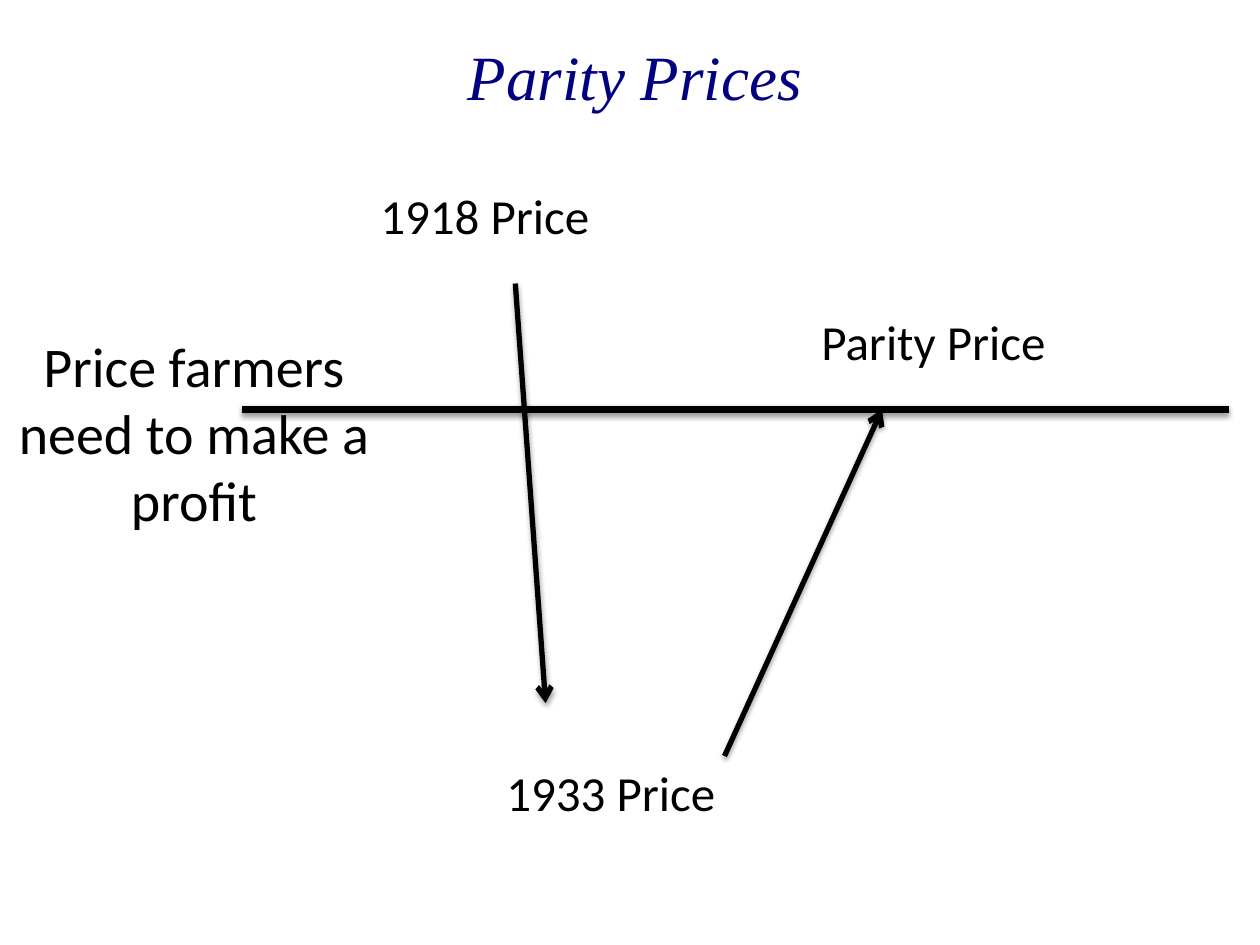
from dataclasses import dataclass

from lxml.etree import SubElement
from pptx import Presentation
from pptx.dml.color import RGBColor as RGB
from pptx.enum.shapes import MSO_CONNECTOR as Conn
from pptx.enum.text import MSO_ANCHOR as Anchor, MSO_AUTO_SIZE as Fit, PP_ALIGN as Align
from pptx.oxml.ns import qn
from pptx.shapes.connector import Connector
from pptx.slide import Slide
from pptx.util import Inches, Pt


@dataclass(frozen=True)
class Theme:
    ink: RGB = RGB(0, 0, 0)
    navy: RGB = RGB(0, 0, 0x80)
    serif: str = "Times New Roman"
    sans: str = "Calibri"
    title: int = 36
    note: int = 32
    label: int = 28
    level: float = 4.5
    arrow: float = 3


THEME = Theme()


@dataclass(frozen=True)
class Label:
    text: str
    box: tuple[float, float, float, float]
    size: int = THEME.label
    font: str = THEME.sans
    color: RGB = THEME.ink
    align: Align = Align.LEFT
    italic: bool = False
    wrap: bool = True


@dataclass(frozen=True)
class Line:
    start: tuple[float, float]
    end: tuple[float, float]
    width: float = THEME.arrow
    arrow: bool = True


LEVEL = 3.25  # height of the parity line

ITEMS = (
    Label("Parity Prices", (0.5, 0.25, 9.08, 1), THEME.title, THEME.serif,
          THEME.navy, Align.CENTER, italic=True, wrap=False),
    Line((1.92, LEVEL), (9.75, LEVEL), THEME.level, arrow=False),
    Label("Price farmers need to make a profit", (0, 2.58, 3.08, 1.72),
          THEME.note, align=Align.CENTER),
    Label("1918 Price", (2.92, 1.42, 2.17, 0.57)),
    Line((4.09, 2.25), (4.33, 5.58)),
    Label("1933 Price", (3.92, 6, 2.17, 0.57)),
    Line((5.75, 6), (7, LEVEL)),
    Label("Parity Price", (6.42, 2.42, 2.42, 0.57)),
)


def add_label(slide: Slide, label: Label) -> None:
    box = slide.shapes.add_textbox(*map(Inches, label.box))
    frame = box.text_frame
    frame.word_wrap = label.wrap
    frame.auto_size = Fit.SHAPE_TO_FIT_TEXT if label.wrap else Fit.NONE
    frame.vertical_anchor = Anchor.TOP
    para = frame.paragraphs[0]
    para.alignment = label.align
    run = para.add_run()
    run.text = label.text
    font = run.font
    font.name, font.size, font.italic = label.font, Pt(label.size), label.italic
    font.color.rgb = label.color


def add_shade(line: Connector) -> None:
    """Put a soft shadow straight below the line."""
    effects = SubElement(line._element.spPr, qn("a:effectLst"))
    shade = SubElement(effects, qn("a:outerShdw"), blurRad=str(Pt(3.1)),
                       dist=str(Pt(1.6)), dir="5400000", rotWithShape="0")
    color = SubElement(shade, qn("a:srgbClr"), val=str(THEME.ink))
    SubElement(color, qn("a:alpha"), val="38000")


def add_line(slide: Slide, item: Line) -> None:
    line = slide.shapes.add_connector(
        Conn.STRAIGHT, *map(Inches, item.start + item.end))
    line.line.color.rgb = THEME.ink
    line.line.width = Pt(item.width)
    if item.arrow:
        SubElement(line.line._get_or_add_ln(), qn("a:tailEnd"), type="arrow")
    add_shade(line)


def main() -> None:
    deck = Presentation()
    deck.slide_width, deck.slide_height = Inches(10), Inches(7.5)
    slide = deck.slides.add_slide(deck.slide_layouts[6])
    for item in ITEMS:
        if isinstance(item, Label):
            add_label(slide, item)
        else:
            add_line(slide, item)
    deck.save("out.pptx")


if __name__ == "__main__":
    main()
